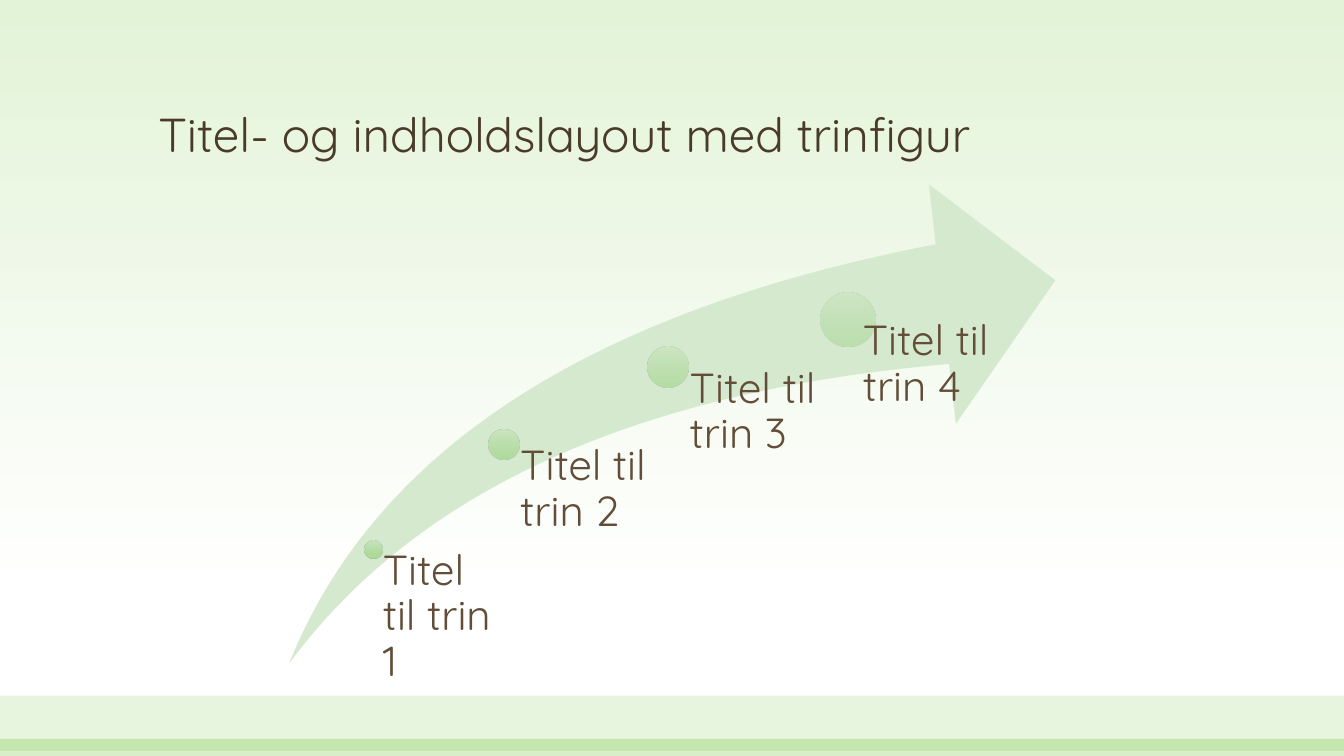
from pptx import Presentation
from pptx import util as u
from pptx.dml.color import RGBColor
from pptx.enum import shapes, text
from pptx.oxml.ns import qn
from lxml import etree

COLORS = {
    "title": "4A3A2A", "label": "624D38", "band": "72C23C", "arrow": "D5E9CE",
    "sky": "E3F3D8", "ground": "FFFFFF",
    "dot_top": "C8E5BC", "dot_mid": "B3DBA2", "dot_end": "A4D78D",
}
FONT = "Quicksand"
CELL = 0.1  # inches per grid column and row
COLS, ROWS = 133.33, 75


def cells(*counts):
    return [u.Inches(count * CELL) for count in counts]


def write(frame, words, *, size, color, anchor=text.MSO_ANCHOR.TOP):
    """Fill a text frame with one left-aligned paragraph."""
    frame.word_wrap = True
    frame.auto_size = text.MSO_AUTO_SIZE.NONE
    frame.vertical_anchor = anchor
    paragraph = frame.paragraphs[0]
    paragraph.alignment = text.PP_ALIGN.LEFT
    paragraph.line_spacing = 0.9
    run = paragraph.add_run()
    run.text = words
    run.font.name = FONT
    run.font.size = u.Pt(size)
    run.font.color.rgb = RGBColor.from_string(COLORS[color])


def set_alpha(color_element, percent):
    etree.SubElement(color_element, qn("a:alpha")).set("val", str(percent * 1000))


def add_gradient(owner, fill, stops, alpha=100):
    """Give the owner a top-to-bottom gradient of (percent, colour) stops."""
    fill.gradient()
    fill.gradient_angle = 270
    stop_list = next(owner.element.iter(qn("a:gsLst")))
    for old_stop in list(stop_list):
        stop_list.remove(old_stop)
    for percent, color in stops:
        stop = etree.SubElement(stop_list, qn("a:gs"), pos=str(percent * 1000))
        tint = etree.SubElement(stop, qn("a:srgbClr"), val=COLORS[color])
        if alpha < 100:
            set_alpha(tint, alpha)


class StepSlide:
    def __init__(self, deck):
        self.slide = deck.slides.add_slide(deck.slide_layouts[5])
        add_gradient(self.slide, self.slide.background.fill,
                     [(0, "sky"), (79, "ground")])

    def title(self, words, left, top, width, height):
        heading = self.slide.shapes.title
        heading.left, heading.top, heading.width, heading.height = cells(
            left, top, width, height)
        write(heading.text_frame, words, size=34, color="title",
              anchor=text.MSO_ANCHOR.BOTTOM)

    def figure(self, kind, left, top, width, height, color=None, alpha=100):
        figure = self.slide.shapes.add_shape(kind, *cells(left, top, width, height))
        figure.shadow.inherit = False
        figure.line.fill.background()
        if color:
            figure.fill.solid()
            figure.fill.fore_color.rgb = RGBColor.from_string(COLORS[color])
            if alpha < 100:
                set_alpha(next(figure.element.spPr.iter(qn("a:srgbClr"))), alpha)
        return figure

    def band(self, top, height, alpha):
        self.figure(shapes.MSO_SHAPE.RECTANGLE, 0, top, COLS, height, "band", alpha)

    def arrow(self, left, top, width, height):
        swoosh = self.figure(shapes.MSO_SHAPE.SWOOSH_ARROW, left, top, width, height, "arrow")
        swoosh.adjustments[0] = swoosh.adjustments[1] = 0.25

    def dot(self, center_x, center_y, size, alpha):
        dot = self.figure(shapes.MSO_SHAPE.OVAL, center_x - size / 2,
                          center_y - size / 2, size, size)
        add_gradient(dot, dot.fill,
                     [(0, "dot_top"), (50, "dot_mid"), (100, "dot_end")], alpha)

    def label(self, words, left, top, width, bottom, inset):
        box = self.slide.shapes.add_textbox(*cells(left, top, width, bottom - top))
        frame = box.text_frame
        frame.margin_left, = cells(inset)
        frame.margin_top = frame.margin_right = frame.margin_bottom = 0
        write(frame, words, size=30, color="label")


def main():
    deck = Presentation()
    deck.slide_width, deck.slide_height = cells(COLS, ROWS)
    page = StepSlide(deck)

    # Bands along the foot
    page.band(69, 5.5, alpha=17)
    page.band(73.3, 1.7, alpha=28)

    page.title("Titel- og indholdslayout med trinfigur", 14.7, 4.8, 104, 11.9)

    # Rising arrow; each label hangs from its dot's centre to the arrow's foot
    arrow_top, arrow_height = 18.3, 47.5
    page.arrow(28.7, arrow_top, 76, arrow_height)
    steps = [  # centre x, centre y, dot size, dot opacity, label width, label inset
        (37.05, 54.5, 1.75, 90, 13, 0.93),
        (50, 44.1, 3.04, 77, 16, 1.61),
        (66.3, 36.4, 4.03, 63, 16, 2.13),
        (84.1, 31.7, 5.4, 50, 18.8, 1.5),
    ]
    for number, (x, y, size, alpha, width, inset) in enumerate(steps, 1):
        page.dot(x, y, size, alpha)
        page.label(f"Titel til trin {number}", x, y, width,
                   arrow_top + arrow_height, inset)

    deck.save("out.pptx")


if __name__ == "__main__":
    main()
